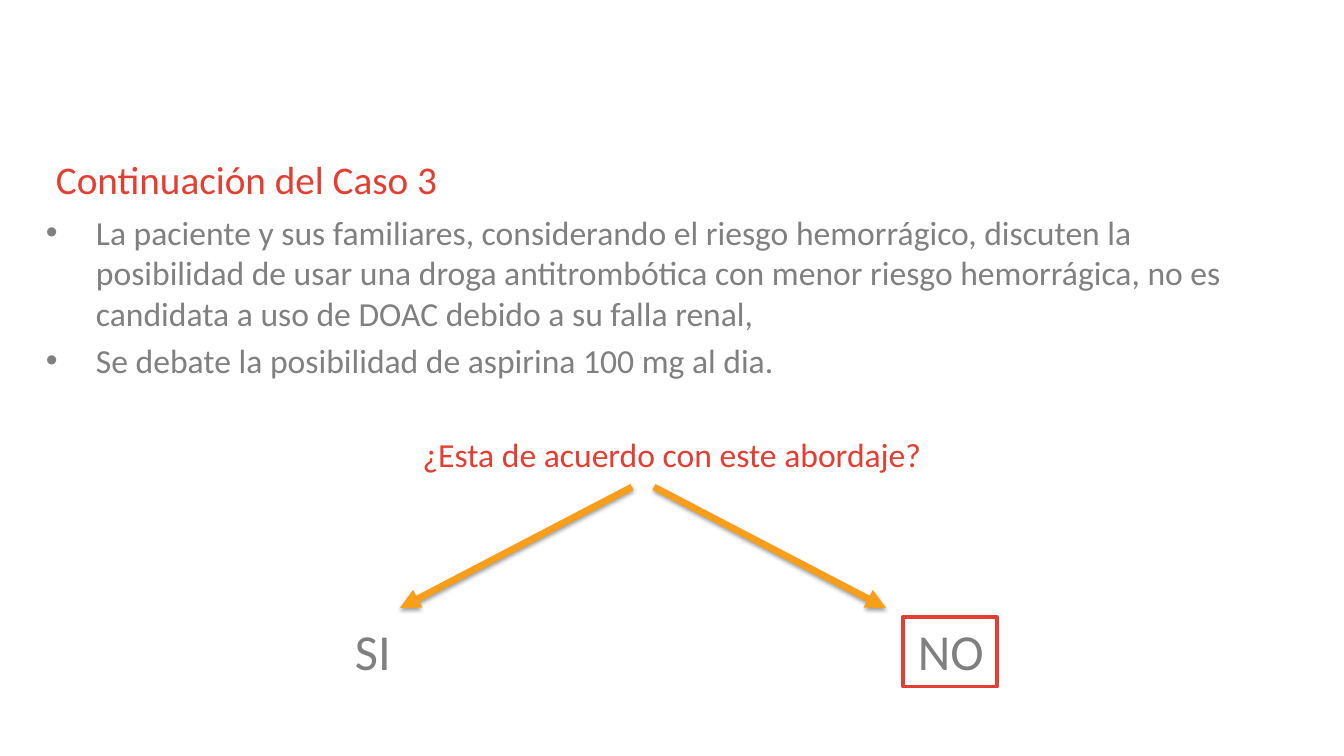
from dataclasses import dataclass

from lxml.etree import SubElement
from pptx import Presentation
from pptx.dml.color import RGBColor
from pptx.enum.shapes import MSO_CONNECTOR, MSO_SHAPE
from pptx.enum.text import PP_ALIGN
from pptx.oxml.ns import qn
from pptx.util import Pt

EMU_PER_PX = 914400 / 100.8


@dataclass(frozen=True)
class Theme:
    font: str = "Calibri"
    title_red: str = "E53E31"
    accent_red: str = "E43D31"
    gray: str = "808080"
    orange: str = "F99E19"
    shadow: str = "000000"
    title_size: int = 28
    body_size: int = 24
    answer_size: int = 36
    frame_width: float = 2.25
    arrow_width: float = 4.75


THEME = Theme()


def px(length):
    """Turn pixels into EMU."""
    return round(length * EMU_PER_PX)


def add_bullet(paragraph, indent):
    """Give a paragraph a round bullet with a hanging indent."""
    properties = paragraph._p.get_or_add_pPr()
    properties.set("marL", str(px(indent)))
    properties.set("indent", str(-px(indent)))
    SubElement(properties, qn("a:buFont"), typeface="Arial")
    SubElement(properties, qn("a:buChar"), char="•")


def add_text(slide, box, *texts, size, color, align=PP_ALIGN.LEFT, indent=0, gap=0):
    """Add a text box with one paragraph for each text."""
    frame = slide.shapes.add_textbox(*map(px, box)).text_frame
    frame.word_wrap = True
    frame.margin_left = frame.margin_right = frame.margin_top = frame.margin_bottom = 0
    for index, text in enumerate(texts):
        paragraph = frame.add_paragraph() if index else frame.paragraphs[0]
        if indent:
            add_bullet(paragraph, indent)
        if index:
            paragraph.space_before = Pt(gap)
        paragraph.alignment = align
        run = paragraph.add_run()
        run.text = text
        run.font.name = THEME.font
        run.font.size = Pt(size)
        run.font.color.rgb = RGBColor.from_string(color)


def add_frame(slide, box):
    """Add an unfilled rectangle with a red outline."""
    shape = slide.shapes.add_shape(MSO_SHAPE.RECTANGLE, *map(px, box))
    shape.shadow.inherit = False
    shape.fill.background()
    shape.line.color.rgb = RGBColor.from_string(THEME.accent_red)
    shape.line.width = Pt(THEME.frame_width)


def add_arrow(slide, start, end):
    """Add a thick orange arrow with a soft shadow below it."""
    arrow = slide.shapes.add_connector(MSO_CONNECTOR.STRAIGHT, *map(px, (*start, *end)))
    arrow.line.color.rgb = RGBColor.from_string(THEME.orange)
    arrow.line.width = Pt(THEME.arrow_width)
    SubElement(arrow.line._get_or_add_ln(), qn("a:tailEnd"), type="triangle")
    effects = SubElement(arrow._element.spPr, qn("a:effectLst"))
    shadow = SubElement(effects, qn("a:outerShdw"), blurRad=str(Pt(3.1)),
                        dist=str(Pt(1.6)), dir="5400000", rotWithShape="0")
    color = SubElement(shadow, qn("a:srgbClr"), val=THEME.shadow)
    SubElement(color, qn("a:alpha"), val="38000")


def main():
    """Build the slide and save it."""
    presentation = Presentation()
    presentation.slide_width, presentation.slide_height = px(1344), px(756)
    slide = presentation.slides.add_slide(presentation.slide_layouts[6])

    add_text(slide, (56, 155, 1190, 48), "Continuación del Caso 3",
             size=THEME.title_size, color=THEME.title_red)
    add_text(slide, (46, 212, 1222, 170),
             "La paciente y sus familiares, considerando el riesgo hemorrágico, "
             "discuten la posibilidad de usar una droga antitrombótica con menor "
             "riesgo hemorrágica, no es candidata a uso de DOAC debido a su falla renal,",
             "Se debate la posibilidad de aspirina 100 mg al dia.",
             size=THEME.body_size, color=THEME.gray, indent=50, gap=4.8)
    add_text(slide, (61, 434, 1222, 42), "¿Esta de acuerdo con este abordaje?",
             size=THEME.body_size, color=THEME.accent_red, align=PP_ALIGN.CENTER)

    add_frame(slide, (903, 617, 94, 70))
    for answer, left in (("SI", 355), ("NO", 918)):
        add_text(slide, (left, 620, 76, 62), answer,
                 size=THEME.answer_size, color=THEME.gray)

    middle = 643
    for side in (1, -1):
        add_arrow(slide, (middle + 11 * side, 487), (middle + 243 * side, 608))

    presentation.save("out.pptx")


if __name__ == "__main__":
    main()
